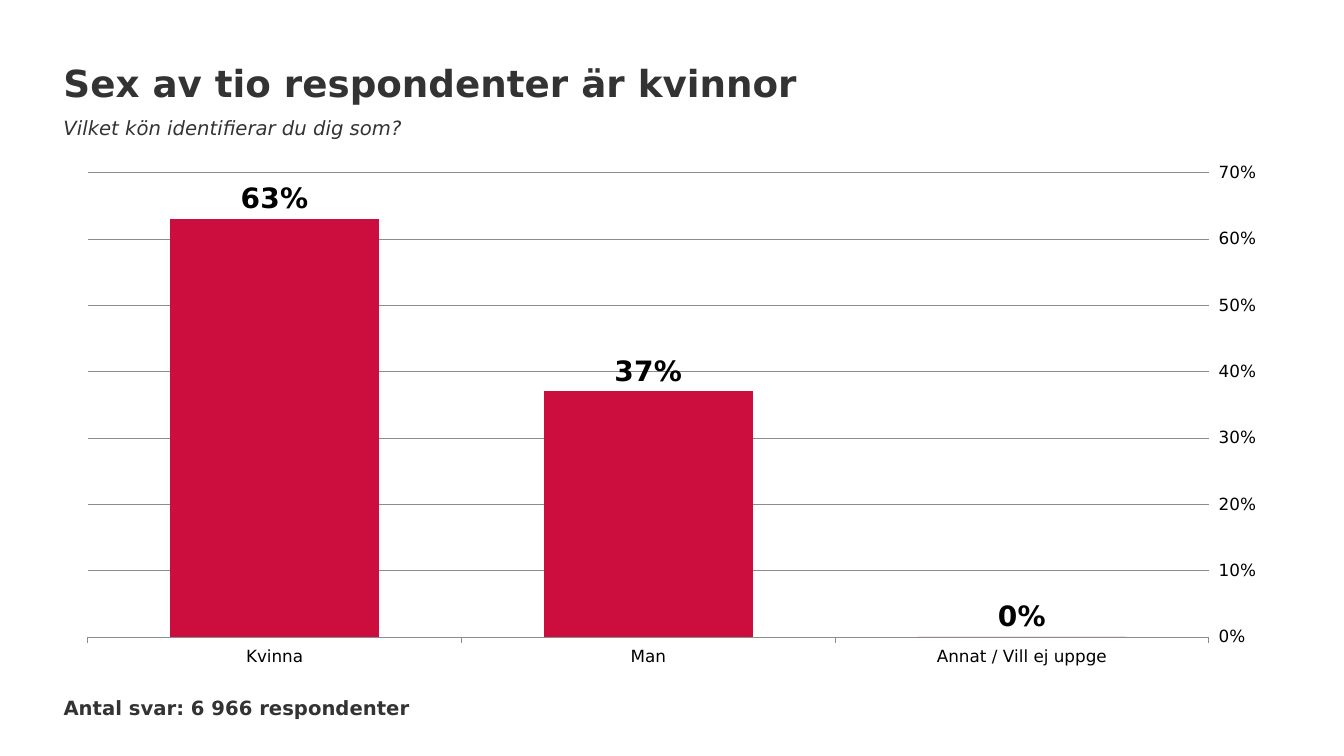
from pptx import Presentation
from pptx.chart import data
from pptx.dml.color import RGBColor
from pptx.enum import chart as ch, text
from pptx.util import Inches, Pt

COLORS = {"text": "333333", "black": "000000", "grid": "8C8C8C", "bar": "CB0E3E"}
FONT = "DejaVu Sans"
LEFT, WIDTH = 0.63, 12.07


def rgb(name):
    return RGBColor.from_string(COLORS[name])


def set_attrs(target, **values):
    for name, value in values.items():
        setattr(target, name, value)


def style_font(font, size, color, **values):
    set_attrs(font, name=FONT, size=Pt(size), **values)
    font.color.rgb = rgb(color)


def style_line(line):
    line.color.rgb = rgb("grid")
    line.width = Pt(0.5)


def add_text(s, words, top, width, height, size, **values):
    sp = s.shapes.add_textbox(Inches(LEFT), Inches(top), Inches(width), Inches(height))
    tf = sp.text_frame
    set_attrs(tf, word_wrap=True, auto_size=text.MSO_AUTO_SIZE.SHAPE_TO_FIT_TEXT,
              margin_left=0, margin_right=0, margin_top=0, margin_bottom=0)
    r = tf.paragraphs[0].add_run()
    r.text = words
    style_font(r.font, size, "text", **values)


def style_axes(chart):
    cat, val = chart.category_axis, chart.value_axis
    label_places = ch.XL_TICK_LABEL_POSITION
    for axis, place in ((cat, label_places.LOW), (val, label_places.HIGH)):
        set_attrs(axis, major_tick_mark=ch.XL_TICK_MARK.OUTSIDE,
                  minor_tick_mark=ch.XL_TICK_MARK.NONE, tick_label_position=place)
        style_font(axis.tick_labels.font, 12, "black")
    style_line(cat.format.line)
    set_attrs(val, minimum_scale=0, maximum_scale=0.7, major_unit=0.1,
              has_major_gridlines=True)
    set_attrs(val.tick_labels, number_format="0%", number_format_is_linked=False)
    val.format.line.fill.background()
    style_line(val.major_gridlines.format.line)


def add_column_chart(s, shares):
    chart_data = data.CategoryChartData(number_format="0%")
    chart_data.categories = list(shares)
    chart_data.add_series("Series 1", list(shares.values()))
    chart = s.shapes.add_chart(
        ch.XL_CHART_TYPE.COLUMN_CLUSTERED, Inches(LEFT), Inches(1.51),
        Inches(WIDTH), Inches(5.21), chart_data).chart
    set_attrs(chart, has_title=False, has_legend=False)
    style_font(chart.font, 12, "black")
    style_axes(chart)
    plot = chart.plots[0]
    set_attrs(plot, gap_width=79, vary_by_categories=False)
    series = plot.series[0]
    series.format.fill.solid()
    series.format.fill.fore_color.rgb = rgb("bar")
    labels = series.data_labels
    set_attrs(labels, show_value=True, position=ch.XL_LABEL_POSITION.OUTSIDE_END,
              number_format="0%", number_format_is_linked=False)
    style_font(labels.font, 20, "black", bold=True)


def main():
    prs = Presentation()
    set_attrs(prs, slide_width=Inches(13.33), slide_height=Inches(7.5))
    s = prs.slides.add_slide(prs.slide_layouts[6])
    add_column_chart(s, {"Kvinna": 0.63, "Man": 0.37, "Annat / Vill ej uppge": 0})
    add_text(s, "Antal svar: 6 966 respondenter", 6.9, 3.92, 0.24, 14, bold=True)
    add_text(s, "Vilket kön identifierar du dig som?", 1.15, WIDTH, 0.24, 14, italic=True)
    add_text(s, "Sex av tio respondenter är kvinnor", 0.6, WIDTH, 0.45, 26.6, bold=True)
    prs.save("out.pptx")


if __name__ == "__main__":
    main()
